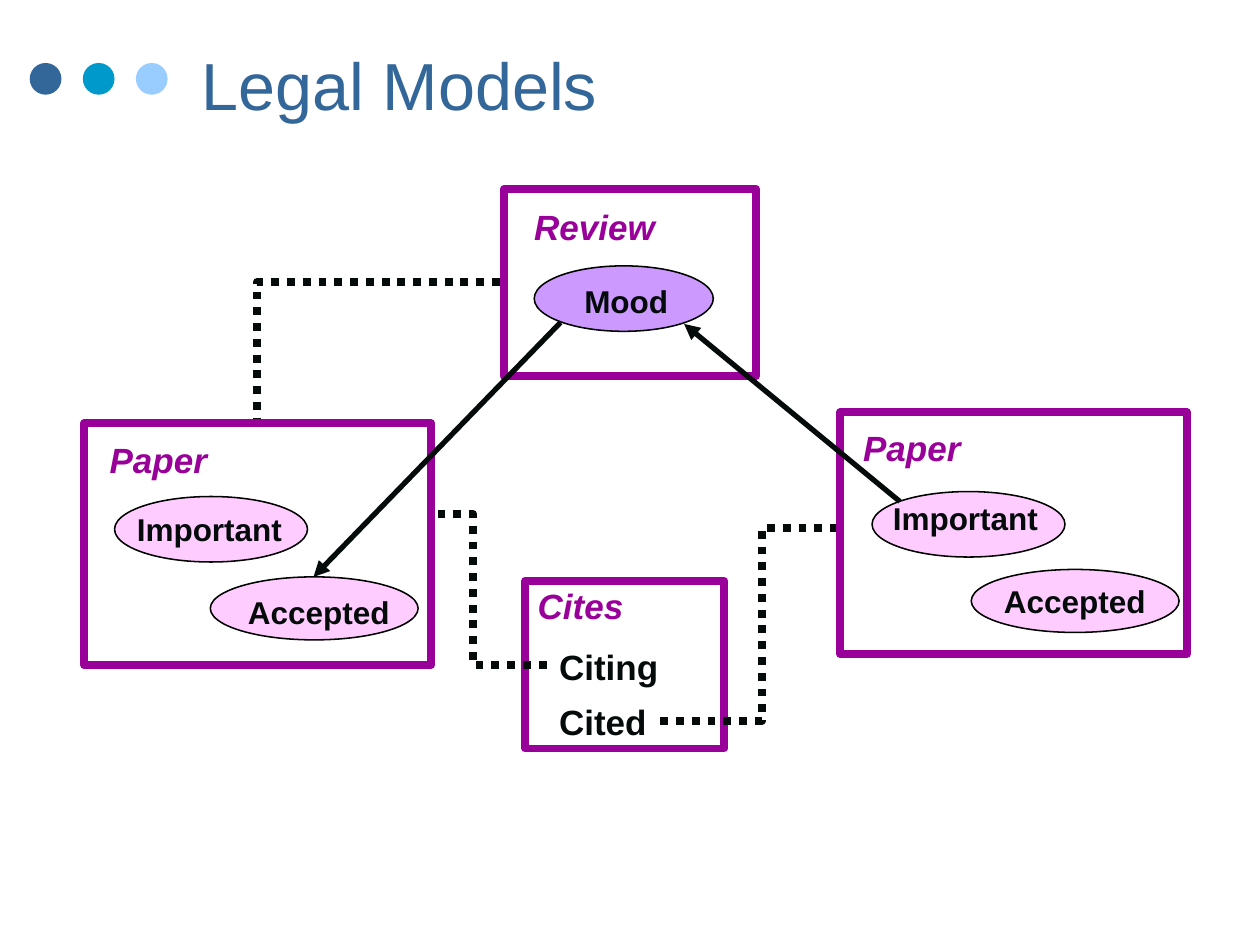
from lxml.etree import SubElement
from pptx import Presentation
from pptx.dml.color import RGBColor
from pptx.enum.dml import MSO_LINE
from pptx.enum.shapes import MSO_CONNECTOR, MSO_SHAPE
from pptx.enum.text import MSO_ANCHOR, MSO_AUTO_SIZE, PP_ALIGN
from pptx.oxml.ns import qn
from pptx.util import Cm, Pt

NAVY = RGBColor(0x33, 0x66, 0x99)
TEAL = RGBColor(0x00, 0x99, 0xCC)
SKY = RGBColor(0x99, 0xCC, 0xFF)
PURPLE = RGBColor(0x99, 0x00, 0x99)
LILAC = RGBColor(0xCC, 0x99, 0xFF)
PINK = RGBColor(0xFF, 0xCC, 0xFF)
INK = RGBColor(0x05, 0x0B, 0x0B)
BLACK = RGBColor(0, 0, 0)
WHITE = RGBColor(0xFF, 0xFF, 0xFF)

HEAD = {"size": Pt(20), "bold": True, "italic": True}
ROLE = {"size": Pt(20), "bold": True}
NODE = {"size": Pt(18), "bold": True}


def style(run, color, form):
    run.font.name = "Arial"
    run.font.color.rgb = color
    for key, value in form.items():
        setattr(run.font, key, value)


def shape(slide, kind, area, fill=None, line=None, width=0):
    item = slide.shapes.add_shape(kind, *map(Cm, area))
    item.shadow.inherit = False
    if fill is None:
        item.fill.background()
    else:
        item.fill.solid()
        item.fill.fore_color.rgb = fill
    if line is None:
        item.line.fill.background()
    else:
        item.line.color.rgb = line
        item.line.width = Pt(width)


def label(slide, text, area, color, form, wrap=False):
    frame = slide.shapes.add_textbox(*map(Cm, area)).text_frame
    frame.word_wrap = wrap
    frame.auto_size = MSO_AUTO_SIZE.SHAPE_TO_FIT_TEXT
    run = frame.paragraphs[0].add_run()
    run.text = text
    style(run, color, form)


def entity(slide, name, box, spot, fill=WHITE):
    """Framed class box with its italic heading at spot."""
    shape(slide, MSO_SHAPE.RECTANGLE, box, fill, PURPLE, 4.5)
    label(slide, name, (*spot, 5.1, 1.09), PURPLE, HEAD, True)


def node(slide, name, oval, spot, fill=PINK):
    """Attribute ellipse with its name at spot."""
    shape(slide, MSO_SHAPE.OVAL, oval, fill, BLACK, 0.88)
    label(slide, name, spot, INK, NODE)


def link(slide, kind, ends, width):
    item = slide.shapes.add_connector(kind, *map(Cm, ends))
    item.line.color.rgb = INK
    item.line.width = Pt(width)
    SubElement(item._element.spPr, qn("a:effectLst"))
    return item


def dotted(slide, ends, corner=False):
    """Dotted elbow; corner makes it turn only once."""
    item = link(slide, MSO_CONNECTOR.ELBOW, ends, 4.5)
    item.line.dash_style = MSO_LINE.ROUND_DOT
    dash = item.line._ln.find(qn("a:prstDash"))
    dash.set("val", "sysDot")
    if corner:
        geom = item._element.spPr.find(qn("a:prstGeom"))
        geom.set("prst", "bentConnector2")


def arrow(slide, ends):
    item = link(slide, MSO_CONNECTOR.STRAIGHT, ends, 3)
    SubElement(item.line._ln, qn("a:tailEnd"), type="triangle")


def header(slide, text):
    for step, color in enumerate((NAVY, TEAL, SKY)):
        shape(slide, MSO_SHAPE.OVAL, (0.6 + 1.07 * step, 1.27, 0.64, 0.64), color)
    title = slide.shapes.title
    area = {"left": 3.81, "top": 0.64, "width": 19.48, "height": 2.11}
    for key, value in area.items():
        setattr(title, key, Cm(value))
    frame = title.text_frame
    frame.vertical_anchor = MSO_ANCHOR.MIDDLE
    frame.paragraphs[0].alignment = PP_ALIGN.LEFT
    run = frame.paragraphs[0].add_run()
    run.text = text
    style(run, NAVY, {"size": Pt(38)})


def paper(slide, box, head, major, word, minor, note):
    """Paper box with both attributes, each part given by its left and top."""
    entity(slide, "Paper", (*box, 6.99, 4.88), head)
    node(slide, "Important", (*major, 3.89, 1.32), (*word, 3.43, 1.02))
    node(slide, "Accepted", (*minor, 4.19, 1.27), (*note, 3.38, 1.02))


def main():
    deck = Presentation()
    deck.slide_width, deck.slide_height = Cm(25.4), Cm(19.05)
    slide = deck.slides.add_slide(deck.slide_layouts[5])
    header(slide, "Legal Models")

    entity(slide, "Cites", (10.59, 11.71, 4.01, 3.38), (10.59, 11.66), None)
    label(slide, "Citing", (11.02, 12.88, 2.51, 1.09), INK, ROLE)
    label(slide, "Cited", (11.02, 14, 2.29, 1.09), INK, ROLE)
    dotted(slide, (13.31, 14.53, 17.42, 10.64))
    dotted(slide, (11.02, 13.41, 8.05, 10.36))

    entity(slide, "Review", (10.16, 3.81, 5.08, 3.78), (10.52, 4.01))
    node(slide, "Mood", (10.77, 5.36, 3.61, 1.32), (11.53, 5.56, 2.21, 1.02), LILAC)
    dotted(slide, (10.08, 5.69, 5.18, 8.43), True)

    paper(slide, (1.7, 8.53), (1.96, 8.71), (2.31, 10.01), (2.51, 10.16),
          (4.24, 11.63), (4.75, 11.84))
    paper(slide, (16.94, 8.31), (17.15, 8.48), (17.58, 9.91), (17.75, 9.93),
          (19.58, 11.48), (19.99, 11.61))

    arrow(slide, (11.3, 6.5, 6.32, 11.63))
    arrow(slide, (18.14, 10.11, 13.79, 6.53))
    deck.save("out.pptx")


if __name__ == "__main__":
    main()
